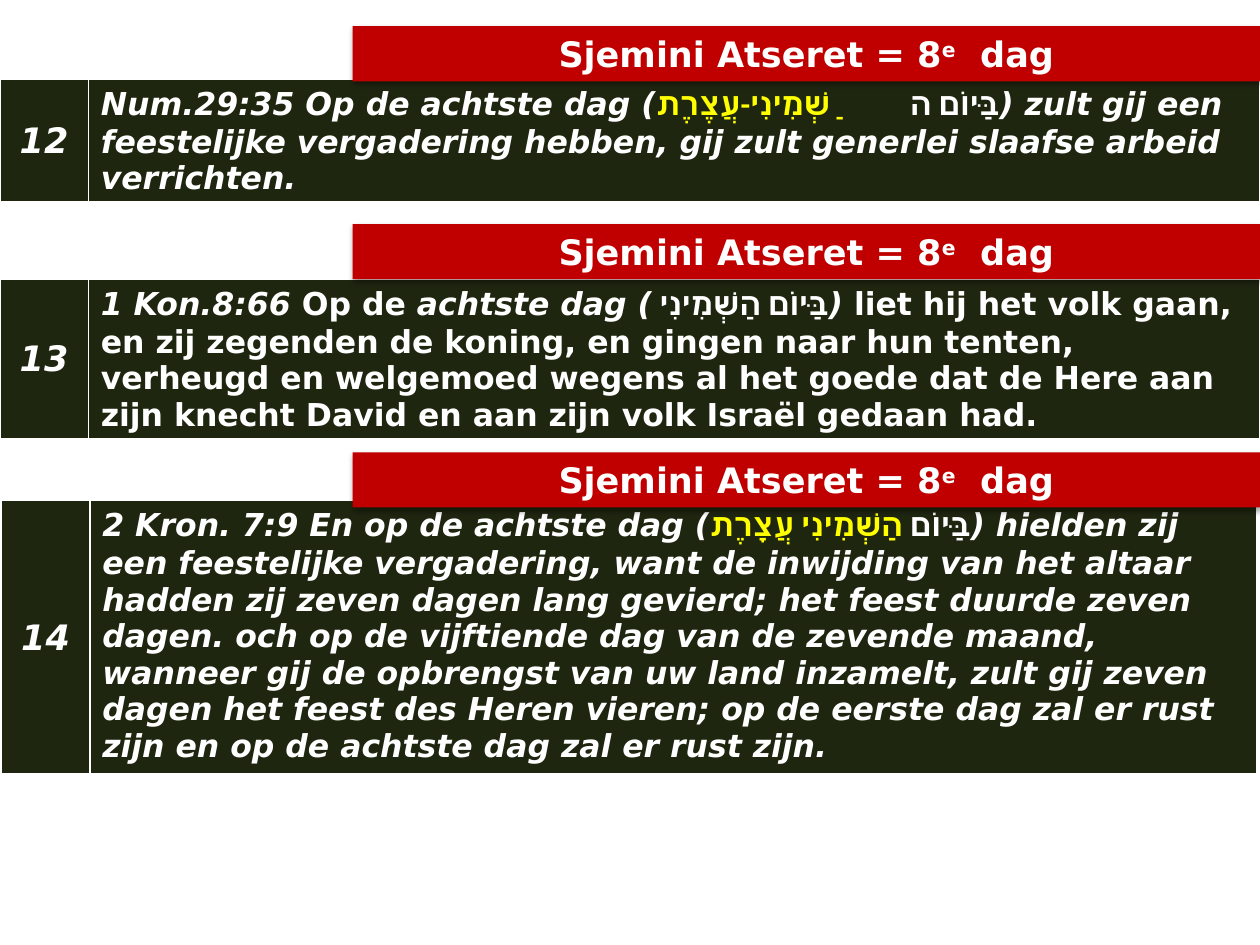
from dataclasses import dataclass

from lxml import etree
from pptx import Presentation
from pptx.dml.color import RGBColor
from pptx.enum.shapes import MSO_SHAPE
from pptx.enum.text import MSO_ANCHOR, MSO_AUTO_SIZE, PP_ALIGN
from pptx.oxml import parse_xml
from pptx.oxml.ns import nsdecls, qn
from pptx.util import Cm, Pt

RECTANGLE = MSO_SHAPE.RECTANGLE
CENTER = PP_ALIGN.CENTER
MIDDLE = MSO_ANCHOR.MIDDLE
FIT_SHAPE = MSO_AUTO_SIZE.SHAPE_TO_FIT_TEXT


@dataclass(frozen=True)
class Theme:
    white: RGBColor = RGBColor(0xFF, 0xFF, 0xFF)
    yellow: RGBColor = RGBColor(0xFF, 0xFF, 0x00)
    red: RGBColor = RGBColor(0xC0, 0x00, 0x00)
    dark: RGBColor = RGBColor(0x1F, 0x26, 0x10)
    dutch_font: str = "DejaVu Sans"
    hebrew_font: str = "Calibri"
    heading: Pt = Pt(20)
    body: Pt = Pt(18)


THEME = Theme()
NUMBER_WIDTH = 1.78
# Border side and its width in EMU
BORDERS = (("lnL", 12700), ("lnR", 12700), ("lnT", 12700), ("lnB", 38100))

# Run styles of the verses
ITALIC, UPRIGHT, HEBREW, MARKED = range(4)

# Banner top, table position (left, top, width, height), number, verse
SECTIONS = (
    (0.53, (0, 1.6, 25.4, 2.48), "12", (
        ("Num.29:35 Op de achtste dag (", ITALIC),
        ("בַּיּוֹם ה", HEBREW),
        ("ַשְּׁמִינִי-עֲצֶרֶת", MARKED),
        (") zult gij een feestelijke vergadering hebben, gij zult generlei "
         "slaafse arbeid verrichten.", ITALIC),
    )),
    (4.52, (0, 5.63, 25.4, 3.23), "13", (
        ("1 Kon.8:66 ", ITALIC),
        ("Op de ", UPRIGHT),
        ("achtste dag (", ITALIC),
        (" בַּיּוֹם הַשְּׁמִינִי", HEBREW),
        (") ", ITALIC),
        ("liet hij het volk gaan, en zij zegenden de koning, en gingen naar "
         "hun tenten, verheugd en welgemoed wegens al het goede dat de Here "
         "aan zijn knecht David en aan zijn volk Israël gedaan had.", UPRIGHT),
    )),
    (9.12, (0.03, 10.09, 25.3, 5.54), "14", (
        ("2 Kron. 7:9 En op de achtste dag (", ITALIC),
        ("בַּיּוֹם ", HEBREW),
        ("הַשְּׁמִינִי עֲצָרֶת", MARKED),
        (") hielden zij een feestelijke vergadering, want de inwijding van "
         "het altaar hadden zij zeven dagen lang gevierd; het feest duurde "
         "zeven dagen. och op de vijftiende dag van de zevende maand, wanneer "
         "gij de opbrengst van uw land inzamelt, zult gij zeven dagen het "
         "feest des Heren vieren; op de eerste dag zal er rust zijn en op de "
         "achtste dag zal er rust zijn.", ITALIC),
    )),
)


def add_run(paragraph, text, size, style=UPRIGHT):
    run = paragraph.add_run()
    run.text = text
    font = run.font
    hebrew = style in (HEBREW, MARKED)
    font.name = THEME.hebrew_font if hebrew else THEME.dutch_font
    font.size = size
    font.bold = True
    font.italic = style == ITALIC
    font.color.rgb = THEME.yellow if style == MARKED else THEME.white
    script_font = etree.SubElement(font._element, qn("a:cs"))
    script_font.set("typeface", font.name)
    return run


def style_cell(cell):
    """Give the cell its dark fill and white borders."""
    cell.fill.solid()
    cell.fill.fore_color.rgb = THEME.dark
    properties = cell._tc.get_or_add_tcPr()
    for position, (side, width) in enumerate(BORDERS):
        properties.insert(position, parse_xml(
            f'<a:{side} {nsdecls("a")} w="{width}"><a:solidFill>'
            f'<a:srgbClr val="{THEME.white}"/></a:solidFill></a:{side}>'))


def add_verse_table(slide, position, number, verse):
    left, top, width, height = position
    table = slide.shapes.add_table(
        1, 2, Cm(left), Cm(top), Cm(width), Cm(height)).table
    table.columns[0].width = Cm(NUMBER_WIDTH)
    table.columns[1].width = Cm(width - NUMBER_WIDTH)
    number_cell, verse_cell = table.rows[0].cells
    for cell in (number_cell, verse_cell):
        style_cell(cell)

    number_cell.vertical_anchor = MIDDLE
    number_line = number_cell.text_frame.paragraphs[0]
    number_line.alignment = CENTER
    add_run(number_line, number, THEME.heading, ITALIC)
    for text, style in verse:
        add_run(verse_cell.text_frame.paragraphs[0], text, THEME.body, style)


def add_shadow(shape):
    shape._element.spPr.append(parse_xml(
        f'<a:effectLst {nsdecls("a")}>'
        '<a:outerShdw blurRad="40000" dist="23000" dir="5400000" rotWithShape="0">'
        '<a:srgbClr val="000000"><a:alpha val="35000"/></a:srgbClr>'
        '</a:outerShdw></a:effectLst>'))


def add_banner(slide, top):
    banner = slide.shapes.add_shape(
        RECTANGLE, Cm(7.11), Cm(top), Cm(18.29), Cm(1.11))
    banner.fill.solid()
    banner.fill.fore_color.rgb = THEME.red
    banner.line.fill.background()
    add_shadow(banner)
    frame = banner.text_frame
    frame.word_wrap = True
    frame.auto_size = FIT_SHAPE
    heading = frame.paragraphs[0]
    heading.alignment = CENTER
    add_run(heading, "Sjemini Atseret = 8", THEME.heading)
    ordinal = add_run(heading, "e", THEME.heading)
    ordinal.font._element.set("baseline", "30000")
    add_run(heading, "  dag", THEME.heading)


def main():
    presentation = Presentation()
    presentation.slide_width = Cm(25.4)
    presentation.slide_height = Cm(19.05)
    slide = presentation.slides.add_slide(presentation.slide_layouts[6])
    for _, position, number, verse in SECTIONS:
        add_verse_table(slide, position, number, verse)
    for banner_top, *_ in SECTIONS:
        add_banner(slide, banner_top)
    presentation.save("out.pptx")


if __name__ == "__main__":
    main()
